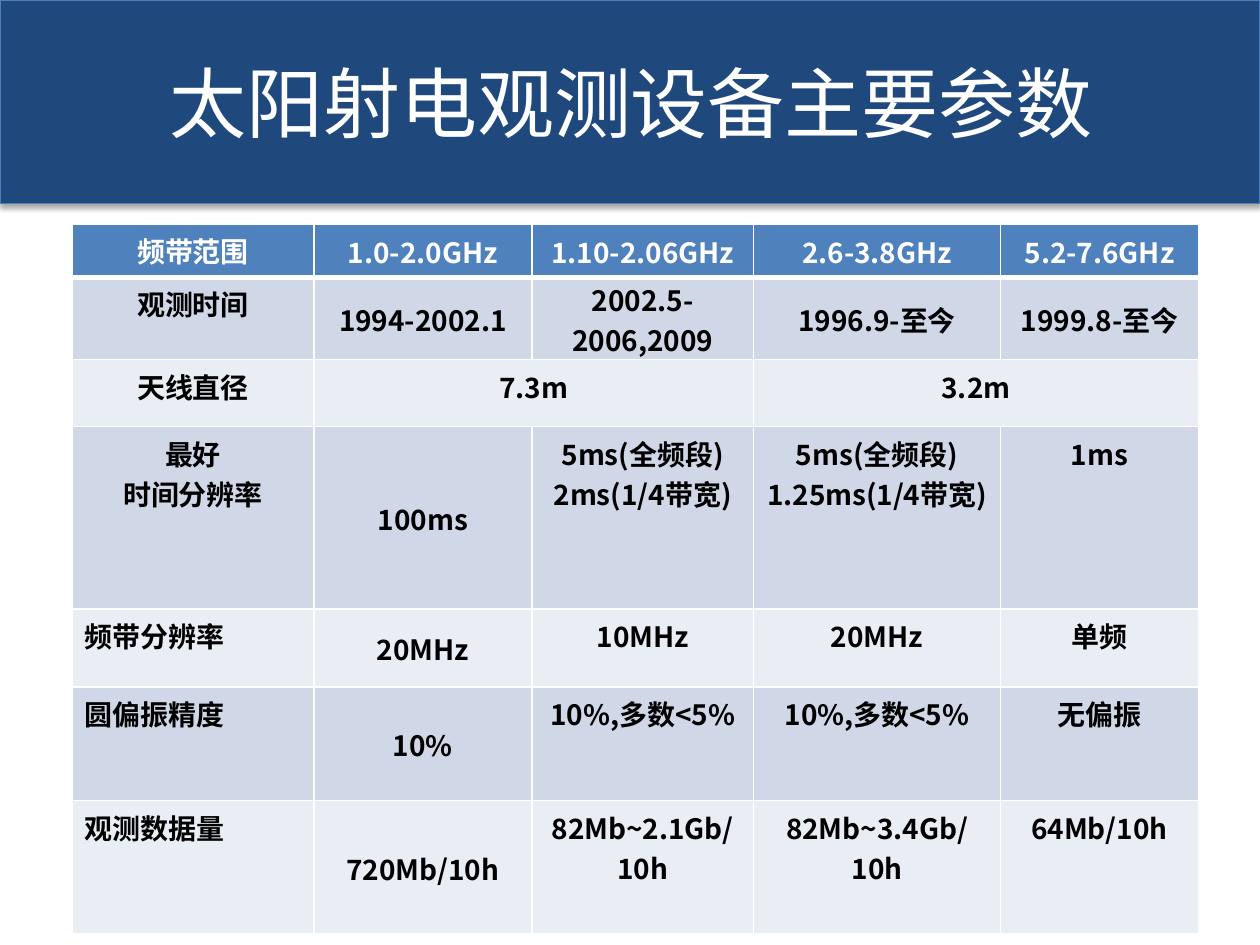
from dataclasses import dataclass

from lxml.etree import SubElement
from pptx import Presentation
from pptx.dml.color import RGBColor
from pptx.enum.shapes import MSO_SHAPE
from pptx.enum.text import MSO_ANCHOR, PP_ALIGN
from pptx.oxml import parse_xml
from pptx.oxml.ns import nsdecls, qn
from pptx.util import Cm, Pt


@dataclass(frozen=True)
class Theme:
    font: str = "Noto Sans CJK SC"
    navy: str = "1F497D"
    edge: str = "4B7EBC"
    head: str = "4F81BD"
    odd: str = "D0D8E8"
    even: str = "E9EDF4"
    white: str = "FFFFFF"
    black: str = "000000"
    title: int = 44
    body: int = 16


@dataclass(frozen=True)
class Row:
    high: float
    cells: tuple[str, ...]
    align: PP_ALIGN = PP_ALIGN.CENTER


THEME = Theme()
WIDTHS = (4.88, 4.39, 4.47, 4.98, 3.99)
ROWS = (
    Row(0.91, ("频带范围", "1.0-2.0GHz", "1.10-2.06GHz", "2.6-3.8GHz", "5.2-7.6GHz")),
    Row(1.57, ("观测时间", "1994-2002.1", "2002.5-2006,2009", "1996.9-至今", "1999.8-至今")),
    Row(1.35, ("天线直径", "7.3m", "", "3.2m", "")),
    Row(3.68, ("最好\n时间分辨率", "100ms", "5ms(全频段)\n2ms(1/4带宽)",
               "5ms(全频段)\n1.25ms(1/4带宽)", "1ms")),
    Row(1.57, ("频带分辨率", "20MHz", "10MHz", "20MHz", "单频"), PP_ALIGN.LEFT),
    Row(2.29, ("圆偏振精度", "10%", "10%,多数<5%", "10%,多数<5%", "无偏振"), PP_ALIGN.LEFT),
    Row(2.69, ("观测数据量", "720Mb/10h", "82Mb~2.1Gb/10h", "82Mb~3.4Gb/10h", "64Mb/10h"),
        PP_ALIGN.LEFT),
)
MERGED = 2


def write(frame, text: str, size: int, color: str, bold: bool, align: PP_ALIGN) -> None:
    for num, line in enumerate(text.split("\n")):
        para = frame.add_paragraph() if num else frame.paragraphs[0]
        para.alignment = align
        run = para.add_run()
        run.text = line
        font = run.font
        font.name, font.size, font.bold = THEME.font, Pt(size), bold
        font.color.rgb = RGBColor.from_string(color)
        SubElement(run._r.get_or_add_rPr(), qn("a:ea"), typeface=THEME.font)


def border(cell, base: float) -> None:
    props = cell._tc.get_or_add_tcPr()
    sides = (("L", 1), ("R", 1), ("T", 1), ("B", base))
    for place, (side, width) in enumerate(sides):
        props.insert(place, parse_xml(
            f'<a:ln{side} {nsdecls("a")} w="{Pt(width)}"><a:solidFill>'
            f'<a:srgbClr val="{THEME.white}"/></a:solidFill></a:ln{side}>'))


def banner(slide) -> None:
    rect = slide.shapes.add_shape(MSO_SHAPE.RECTANGLE, 0, 0, Cm(25.4), Cm(4.11))
    rect.fill.solid()
    rect.fill.fore_color.rgb = RGBColor.from_string(THEME.navy)
    rect.line.color.rgb = RGBColor.from_string(THEME.edge)
    rect.line.width = Pt(0.75)
    rect._element.spPr.append(parse_xml(
        f'<a:effectLst {nsdecls("a")}><a:outerShdw blurRad="{Pt(3.1)}" '
        f'dist="{Pt(1.8)}" dir="5400000" rotWithShape="0">'
        f'<a:srgbClr val="{THEME.black}"><a:alpha val="35000"/></a:srgbClr>'
        '</a:outerShdw></a:effectLst>'))
    title = slide.shapes.title
    title.left, title.top, title.width, title.height = Cm(1.3), Cm(0.46), Cm(22.86), Cm(3.18)
    title.text_frame.vertical_anchor = MSO_ANCHOR.MIDDLE
    write(title.text_frame, "太阳射电观测设备主要参数", THEME.title, THEME.white, False,
          PP_ALIGN.CENTER)
    rect._element.addnext(title._element)


def style(cell, row: int, col: int) -> None:
    fill = THEME.head if row == 0 else THEME.odd if row % 2 else THEME.even
    cell.fill.solid()
    cell.fill.fore_color.rgb = RGBColor.from_string(fill)
    border(cell, 1 if row else 3)
    if (col and row < MERGED) or (col == 1 and row != MERGED):
        cell.vertical_anchor = MSO_ANCHOR.MIDDLE
        cell.margin_left = cell.margin_right = cell.margin_top = Cm(0.03)
        cell.margin_bottom = 0


def grid(slide) -> None:
    table = slide.shapes.add_table(
        len(ROWS), len(WIDTHS), Cm(1.45), Cm(4.52),
        Cm(sum(WIDTHS)), Cm(sum(row.high for row in ROWS))).table
    for col, width in enumerate(WIDTHS):
        table.columns[col].width = Cm(width)
    for left in (1, 3):
        table.cell(MERGED, left).merge(table.cell(MERGED, left + 1))
    for num, row in enumerate(ROWS):
        table.rows[num].height = Cm(row.high)
        for col, text in enumerate(row.cells):
            cell = table.cell(num, col)
            style(cell, num, col)
            if text:
                write(cell.text_frame, text, THEME.body,
                      THEME.black if num else THEME.white, True,
                      PP_ALIGN.CENTER if col else row.align)


def main() -> None:
    deck = Presentation()
    deck.slide_width, deck.slide_height = Cm(25.4), Cm(19.05)
    slide = deck.slides.add_slide(deck.slide_layouts[5])
    banner(slide)
    grid(slide)
    deck.save("out.pptx")


if __name__ == "__main__":
    main()
